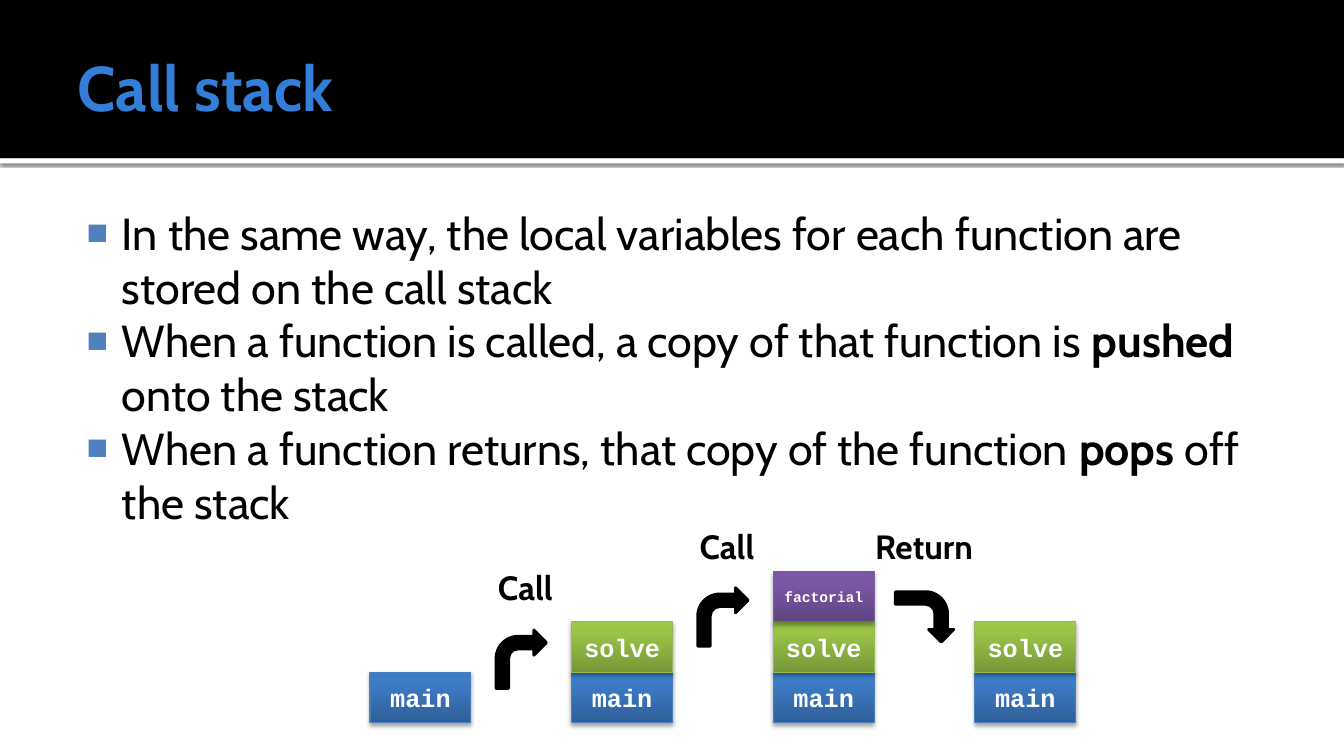
import dataclasses
import typing

import lxml.etree
import pptx
import pptx.dml.color
import pptx.enum.shapes
import pptx.enum.text
import pptx.oxml.ns
import pptx.util

Inches = pptx.util.Inches
Pt = pptx.util.Pt
qn = pptx.oxml.ns.qn
Rgb = pptx.dml.color.RGBColor.from_string
Shape = pptx.enum.shapes.MSO_SHAPE
Align = pptx.enum.text.PP_ALIGN
Anchor = pptx.enum.text.MSO_ANCHOR


@dataclasses.dataclass(frozen=True)
class Theme:
    sans: str = "Cabin"
    mono: str = "Courier New"
    black: str = "000000"
    white: str = "FFFFFF"
    title: str = "337ED9"
    bullet: str = "4F81BD"
    title_size: float = 45
    body_size: float = 32
    label_size: float = 24
    code_size: float = 18
    small_size: float = 10.5


@dataclasses.dataclass(frozen=True)
class Shadow:
    alpha: int
    blur: float
    dist: float


@dataclasses.dataclass(frozen=True)
class Frame:
    name: str
    stops: tuple[str, str, str]
    line: str
    size: float


@dataclasses.dataclass(frozen=True)
class Step:
    """One state of the stack, with the label and arrow that lead to it."""
    frames: tuple[Frame, ...]
    label: str = ""
    left: float = 0
    top: float = 0
    width: float = 1.08
    drop: float = 0.66
    turn: float = 0


THEME = Theme()
BAR_SHADE = Shadow(60, 2.5, 0.8)
BLOCK_SHADE = Shadow(35, 3.1, 1.8)

MAIN = Frame("main", ("2F5F99", "3D7CC7", "3A7CCB"), "4B7EBC", THEME.code_size)
SOLVE = Frame("solve", ("779737", "9BC348", "9DC746"), "98B955", THEME.code_size)
FACT = Frame("factorial", ("5F4480", "7B58A6", "7C57A8"), "7D60A0", THEME.small_size)

STEPS = (
    Step((MAIN,)),
    Step((MAIN, SOLVE), "Call", 4.67, 5.58, drop=0.67),
    Step((MAIN, SOLVE, FACT), "Call", 6.67, 5.17),
    Step((MAIN, SOLVE), "Return", 8.5, 5.17, width=1.33, turn=90),
)
STACK_LEFT, STACK_GAP = 3.67, 2
BASE_TOP, BLOCK_WIDE, BLOCK_HIGH = 6.67, 1, 0.5

POINTS = (
    "In the same way, the local variables for each function are stored on the call stack",
    "When a function is called, a copy of that function is **pushed** onto the stack",
    "When a function returns, that copy of the function **pops** off the stack",
)


def child(parent: typing.Any, tag: str, **attrs: typing.Any) -> typing.Any:
    texts = {key: str(value) for key, value in attrs.items()}
    return lxml.etree.SubElement(parent, qn(tag), texts)


def add_bullet(para: typing.Any) -> None:
    props = para._p.get_or_add_pPr()
    props.set("marL", str(Inches(0.48)))
    props.set("indent", str(Inches(-0.35)))
    child(child(props, "a:buClr"), "a:srgbClr", val=THEME.bullet)
    child(props, "a:buSzPct", val=80000)
    child(props, "a:buFont", typeface="Arial")
    child(props, "a:buChar", char="■")


def write(shape: typing.Any, *lines: str, size: float, color: str = THEME.black,
          face: str = THEME.sans, bold: bool = False, align: Align = Align.LEFT,
          anchor: Anchor = Anchor.TOP, bullet: bool = False,
          inset: tuple[float, ...] = (0.1, 0.05, 0.1, 0.05)) -> None:
    """Fill a shape with one paragraph per line; ** switches bold on and off."""
    frame = shape.text_frame
    frame.word_wrap = True
    frame.vertical_anchor = anchor
    (frame.margin_left, frame.margin_top,
     frame.margin_right, frame.margin_bottom) = map(Inches, inset)
    for row, line in enumerate(lines):
        para = frame.add_paragraph() if row else frame.paragraphs[0]
        para.alignment = align
        if bullet:
            add_bullet(para)
        for part, text in enumerate(line.split("**")):
            run = para.add_run()
            run.text = text
            run.font.name = face
            run.font.size = Pt(size)
            run.font.bold = bold or part % 2 == 1
            run.font.color.rgb = Rgb(color)


def add_box(shapes: typing.Any, left: float, top: float, width: float,
            height: float) -> typing.Any:
    return shapes.add_textbox(*map(Inches, (left, top, width, height)))


def add_form(shapes: typing.Any, kind: Shape, left: float, top: float, width: float,
             height: float, fill: str, line: str = "", weight: float = 0,
             shade: Shadow | None = None) -> typing.Any:
    form = shapes.add_shape(kind, *map(Inches, (left, top, width, height)))
    form.fill.solid()
    form.fill.fore_color.rgb = Rgb(fill)
    if line:
        form.line.color.rgb = Rgb(line)
        form.line.width = Pt(weight)
    else:
        form.line.fill.background()
    form.shadow.inherit = False
    if shade:
        outer = child(form._element.spPr.find(qn("a:effectLst")), "a:outerShdw",
                      blurRad=Pt(shade.blur), dist=Pt(shade.dist),
                      dir=90 * 60000, rotWithShape=0)
        tint = child(outer, "a:srgbClr", val=THEME.black)
        child(tint, "a:alpha", val=shade.alpha * 1000)
    return form


def add_block(shapes: typing.Any, frame: Frame, left: float, top: float) -> None:
    block = add_form(shapes, Shape.RECTANGLE, left, top, BLOCK_WIDE, BLOCK_HIGH,
                     frame.stops[0], frame.line, 0.75, BLOCK_SHADE)
    block.fill.gradient()
    block.fill.gradient_angle = 90
    stops = block._element.spPr.find(qn("a:gradFill")).find(qn("a:gsLst"))
    for stop in list(stops):
        stops.remove(stop)
    for place, color in zip((0, 80, 100), frame.stops):
        child(child(stops, "a:gs", pos=place * 1000), "a:srgbClr", val=color)
    write(block, frame.name, size=frame.size, color=THEME.white, face=THEME.mono,
          bold=True, align=Align.CENTER, anchor=Anchor.MIDDLE)


def add_step(shapes: typing.Any, step: Step, left: float) -> None:
    if step.label:
        shapes = shapes.add_group_shape().shapes
    for level, frame in enumerate(step.frames):
        add_block(shapes, frame, left, BASE_TOP - level * BLOCK_HIGH)
    if step.label:
        arrow = add_form(shapes, Shape.BENT_ARROW, left - 0.75, step.top + step.drop,
                         0.5, 0.58, THEME.black, THEME.black, 2)
        arrow.rotation = step.turn
        label = add_box(shapes, step.left, step.top, step.width, 0.5)
        write(label, step.label, size=THEME.label_size, bold=True, align=Align.CENTER)


def main() -> None:
    deck = pptx.Presentation()
    deck.slide_width, deck.slide_height = Inches(13.33), Inches(7.5)
    shapes = deck.slides.add_slide(deck.slide_layouts[6]).shapes

    add_form(shapes, Shape.RECTANGLE, 0, 1.57, 13.33, 0.05, THEME.white, shade=BAR_SHADE)
    add_form(shapes, Shape.RECTANGLE, 0, 0, 13.33, 1.57, THEME.black)
    write(add_box(shapes, 0.67, 0.17, 12, 1.37), "Call stack", size=THEME.title_size,
          color=THEME.title, bold=True, anchor=Anchor.MIDDLE,
          inset=(0.1, 0.05, 0.05, 0.05))
    write(add_box(shapes, 0.67, 1.94, 12, 5.06), *POINTS, size=THEME.body_size,
          bullet=True, inset=(0.06, 0.1, 0.1, 0.05))
    for index, step in enumerate(STEPS):
        add_step(shapes, step, STACK_LEFT + index * STACK_GAP)
    deck.save("out.pptx")


if __name__ == "__main__":
    main()
